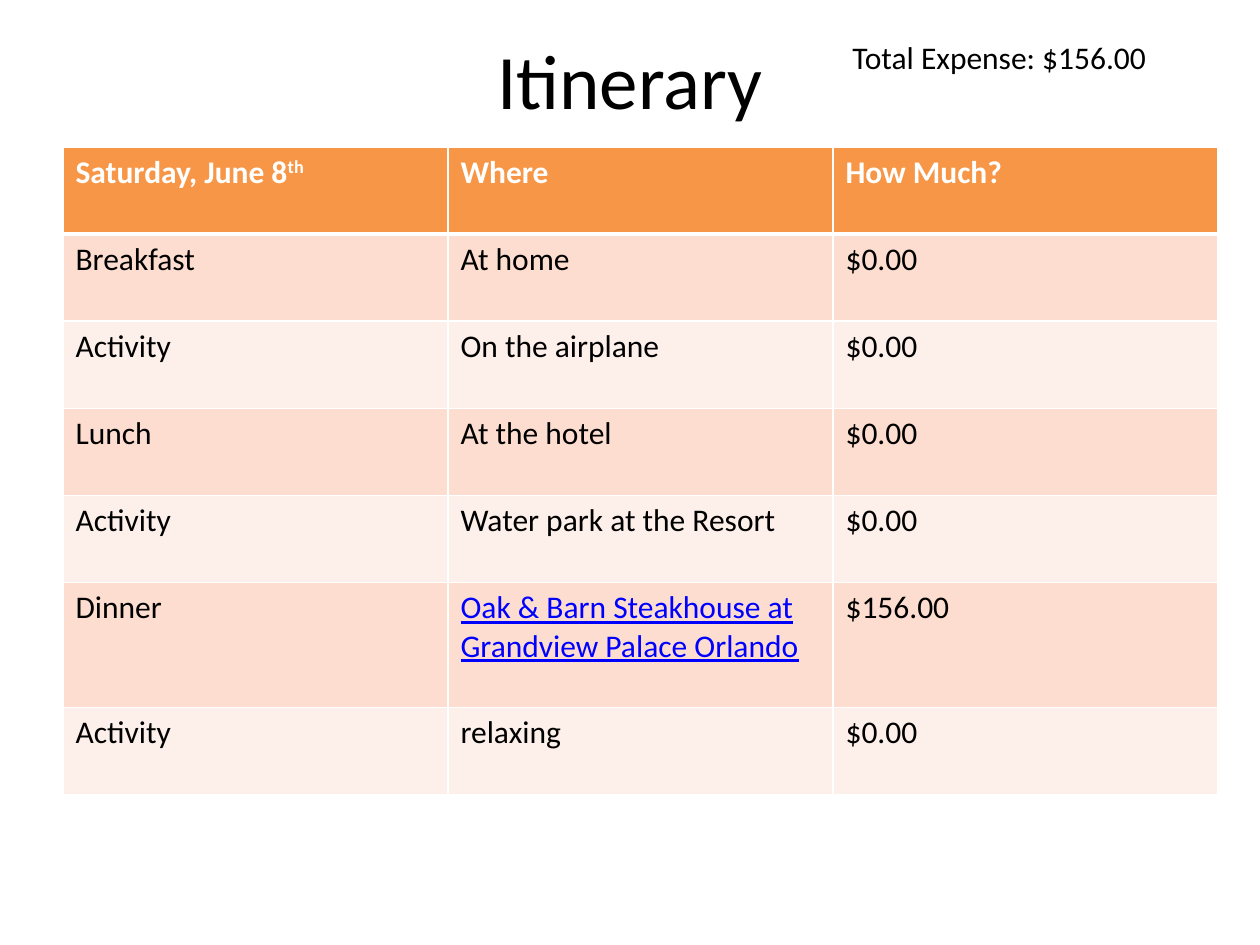
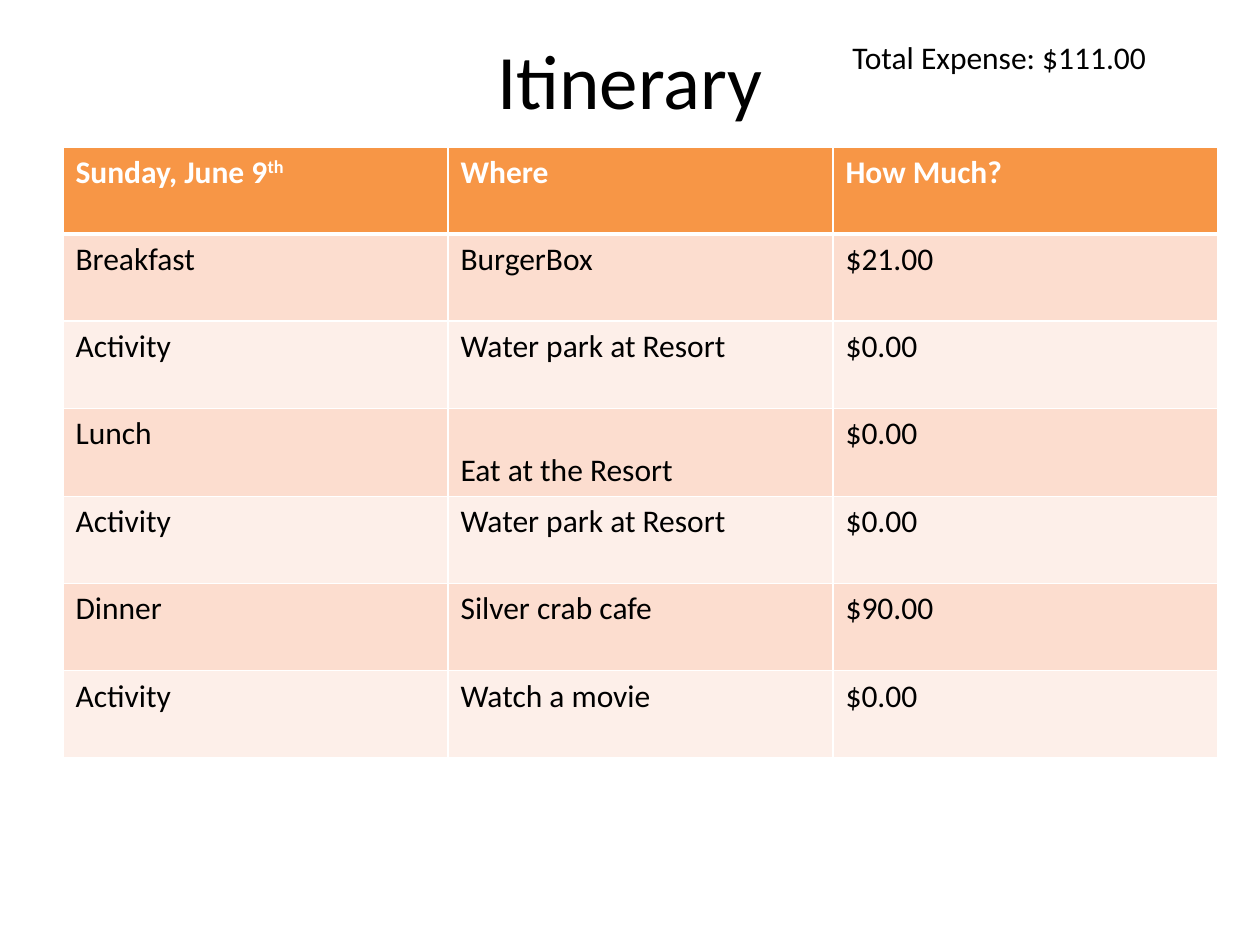
import dataclasses

import lxml.etree
import pptx
import pptx.dml.color
import pptx.enum.text
import pptx.oxml
import pptx.oxml.ns
import pptx.util

ANCHOR = pptx.enum.text.MSO_ANCHOR
ALIGN = pptx.enum.text.PP_ALIGN


@dataclasses.dataclass(frozen=True)
class Theme:
    font: str = "Calibri"
    title_size: int = 44
    body_size: int = 18
    text: str = "000000"
    link: str = "0000FF"
    header: str = "F79646"
    header_text: str = "FFFFFF"
    bands: tuple = ("FCDDCF", "FDEFE9")
    border: str = "FFFFFF"
    border_width: float = 1
    header_rule: float = 3


@dataclasses.dataclass(frozen=True)
class Entry:
    text: str
    superscript: str = ""
    link: bool = False
    anchor: ANCHOR = ANCHOR.TOP


@dataclasses.dataclass(frozen=True)
class Day:
    date: str
    total: str
    plans: tuple
    tall_rows: dict


MEALS = ("Breakfast", "Activity", "Lunch", "Activity", "Dinner", "Activity")
ROW_HEIGHT = 8.3

DAYS = (
    Day("Saturday, June 8", "$156.00", (
        ("At home", "$0.00"),
        ("On the airplane", "$0.00"),
        ("At the hotel", "$0.00"),
        ("Water park at the Resort", "$0.00"),
        (Entry("Oak & Barn Steakhouse at Grandview Palace Orlando", link=True), "$156.00"),
        ("relaxing", "$0.00"),
    ), {5: 11.9}),
    Day("Sunday, June 9", "$111.00", (
        ("BurgerBox", "$21.00"),
        ("Water park at Resort", "$0.00"),
        (Entry("Eat at the Resort", anchor=ANCHOR.BOTTOM), "$0.00"),
        ("Water park at Resort", "$0.00"),
        ("Silver crab cafe", "$90.00"),
        ("Watch a movie", "$0.00"),
    ), {3: 8.4}),
)


class Pages:
    columns = 120
    rows = 90

    def __init__(self, theme):
        self.theme = theme
        self.deck = pptx.Presentation()
        self.deck.slide_width = pptx.util.Inches(10)
        self.deck.slide_height = pptx.util.Inches(7.5)
        self.page = None

    def add_page(self):
        self.page = self.deck.slides.add_slide(self.deck.slide_layouts[6])

    def across(self, columns):
        return round(self.deck.slide_width * columns / self.columns)

    def down(self, rows):
        return round(self.deck.slide_height * rows / self.rows)

    def style(self, para, size, color, bold=False, underline=False):
        para.font.name = self.theme.font
        para.font.size = pptx.util.Pt(size)
        para.font.color.rgb = pptx.dml.color.RGBColor.from_string(color)
        para.font.bold = bold
        para.font.underline = underline

    def text(self, words, left, top, width, height, size,
             align=ALIGN.LEFT, anchor=ANCHOR.TOP):
        box = self.page.shapes.add_textbox(
            self.across(left), self.down(top), self.across(width), self.down(height))
        frame = box.text_frame
        frame.word_wrap = True
        frame.vertical_anchor = anchor
        para = frame.paragraphs[0]
        para.text = words
        para.alignment = align
        self.style(para, size, self.theme.text)

    def borders(self, cell, bottom_width):
        properties = cell._tc.get_or_add_tcPr()
        name = pptx.oxml.ns.qn
        for side in "LRTB":
            width = bottom_width if side == "B" else self.theme.border_width
            line = lxml.etree.SubElement(
                properties, name("a:ln" + side), w=str(pptx.util.Pt(width)))
            fill = lxml.etree.SubElement(line, name("a:solidFill"))
            lxml.etree.SubElement(fill, name("a:srgbClr"), val=self.theme.border)

    def cell(self, cell, entry, row):
        theme = self.theme
        heading = row == 0
        self.borders(cell, theme.header_rule if heading else theme.border_width)
        cell.fill.solid()
        fill = theme.header if heading else theme.bands[(row - 1) % 2]
        cell.fill.fore_color.rgb = pptx.dml.color.RGBColor.from_string(fill)
        cell.vertical_anchor = entry.anchor
        para = cell.text_frame.paragraphs[0]
        para.add_run().text = entry.text
        if entry.superscript:
            span = para.add_run()
            span.text = entry.superscript
            span._r.get_or_add_rPr().set("baseline", "30000")
        color = theme.header_text if heading else theme.link if entry.link else theme.text
        self.style(para, theme.body_size, color, heading, entry.link)

    def table(self, entries, heights, left, top, width):
        count = len(entries[0])
        table = self.page.shapes.add_table(
            len(entries), count, self.across(left), self.down(top),
            self.across(width), self.down(sum(heights))).table
        for column in table.columns:
            column.width = self.across(width / count)
        for row, (line, height) in enumerate(zip(entries, heights)):
            table.rows[row].height = self.down(height)
            for column, entry in enumerate(line):
                entry = entry if isinstance(entry, Entry) else Entry(entry)
                self.cell(table.cell(row, column), entry, row)


def main():
    theme = Theme()
    pages = Pages(theme)
    for day in DAYS:
        pages.add_page()
        pages.text("Itinerary", 6, 0, 108, 15, theme.title_size,
                   ALIGN.CENTER, ANCHOR.MIDDLE)
        pages.text(f"Total Expense: {day.total}", 80, 3, 37, 4.8, theme.body_size)
        entries = [(Entry(day.date, "th"), "Where", "How Much?")]
        entries += [(meal, *plan) for meal, plan in zip(MEALS, day.plans)]
        heights = [day.tall_rows.get(row, ROW_HEIGHT) for row in range(len(entries))]
        pages.table(entries, heights, 6, 14, 110)
    pages.deck.save("out.pptx")


if __name__ == "__main__":
    main()
